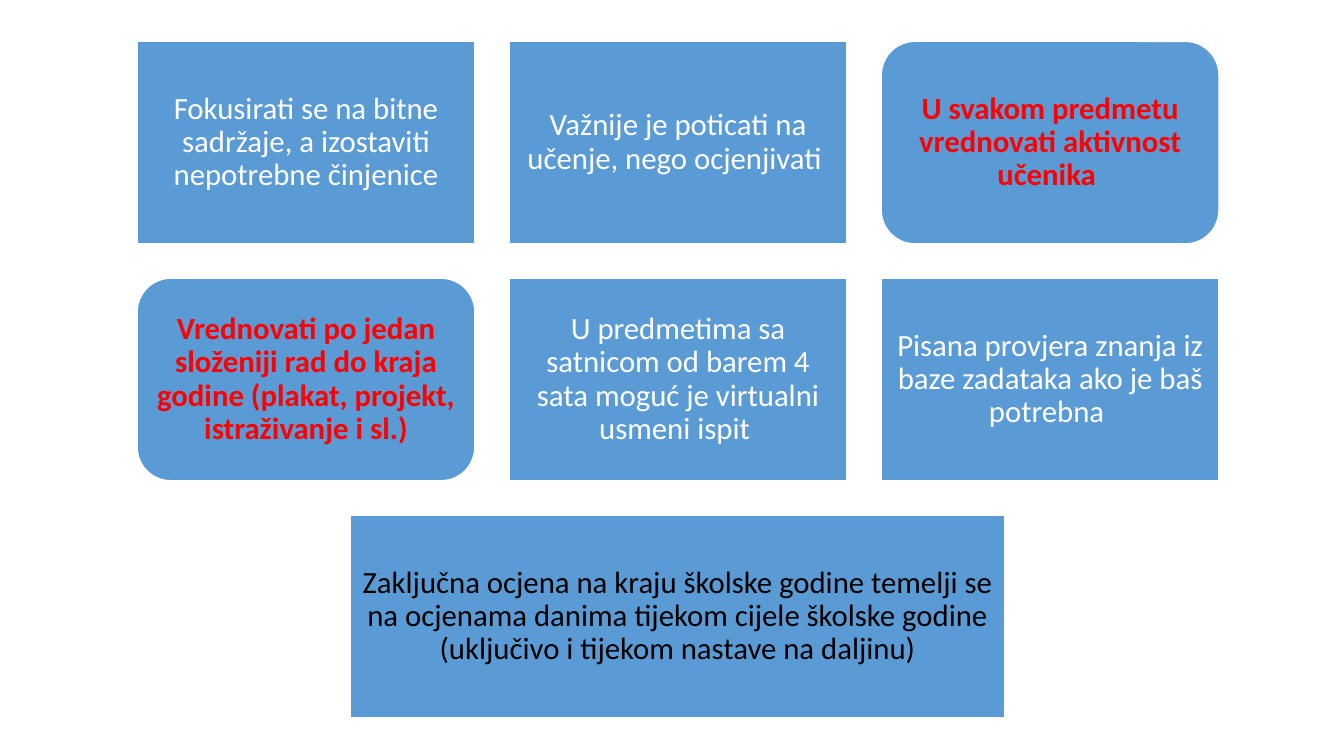
from dataclasses import dataclass

from pptx import Presentation
from pptx.dml.color import RGBColor
from pptx.enum.shapes import MSO_SHAPE as Shape
from pptx.enum.text import MSO_ANCHOR as Anchor, PP_ALIGN as Align
from pptx.util import Inches, Pt


@dataclass(frozen=True)
class Theme:
    font: str = "Calibri"
    size: int = 22
    fill: str = "5B9BD5"
    white: str = "FFFFFF"
    black: str = "000000"
    accent: str = "FF0000"


THEME = Theme()
LEFT, TOP = 1.36, 0.41
WIDTH, HEIGHT = 3.35, 2.01
GAP = 0.34
COLUMN_STEP, ROW_STEP = WIDTH + GAP, HEIGHT + GAP
COLUMNS = 3
SUMMARY_LEFT, SUMMARY_WIDTH = 3.47, 6.5

GUIDELINES = [
    ("Fokusirati se na bitne sadržaje, a izostaviti nepotrebne činjenice", False),
    ("Važnije je poticati na učenje, nego ocjenjivati ", False),
    ("U svakom predmetu vrednovati aktivnost učenika ", True),
    ("Vrednovati po jedan složeniji rad do kraja godine (plakat, projekt, istraživanje i sl.)", True),
    ("U predmetima sa satnicom od barem 4 sata moguć je virtualni usmeni ispit ", False),
    ("Pisana provjera znanja iz baze zadataka ako je baš potrebna ", False),
]
SUMMARY = (
    "Zaključna ocjena na kraju školske godine temelji se na ocjenama danima "
    "tijekom cijele školske godine (uključivo i tijekom nastave na daljinu)"
)


class SlideBuilder:
    """Draws styled guideline cards on one slide."""

    def __init__(self, slide, theme):
        self.slide = slide
        self.theme = theme

    def card(self, text, left, top, width, color, kind=Shape.RECTANGLE, bold=False):
        shape = self.slide.shapes.add_shape(
            kind, Inches(left), Inches(top), Inches(width), Inches(HEIGHT)
        )
        shape.shadow.inherit = False
        shape.fill.solid()
        shape.fill.fore_color.rgb = RGBColor.from_string(self.theme.fill)
        shape.line.color.rgb = RGBColor.from_string(self.theme.white)
        shape.line.width = Pt(1)
        self.label(shape.text_frame, text, color, bold)

    def label(self, text_frame, text, color, bold):
        text_frame.text = text
        text_frame.word_wrap = True
        text_frame.vertical_anchor = Anchor.MIDDLE
        text_frame.margin_left = text_frame.margin_right = Inches(0.09)
        text_frame.margin_top = text_frame.margin_bottom = Inches(0.09)
        paragraph = text_frame.paragraphs[0]
        paragraph.alignment = Align.CENTER
        paragraph.line_spacing = 0.9
        font = paragraph.runs[0].font
        font.name = self.theme.font
        font.size = Pt(self.theme.size)
        font.bold = bold
        font.color.rgb = RGBColor.from_string(color)

    def guideline(self, index, text, highlighted):
        row, column = divmod(index, COLUMNS)
        self.card(
            text,
            LEFT + column * COLUMN_STEP,
            TOP + row * ROW_STEP,
            WIDTH,
            self.theme.accent if highlighted else self.theme.white,
            Shape.FLOWCHART_ALTERNATE_PROCESS if highlighted else Shape.RECTANGLE,
            highlighted,
        )


def main():
    presentation = Presentation()
    presentation.slide_width = Inches(13.33)
    presentation.slide_height = Inches(7.5)
    slide = presentation.slides.add_slide(presentation.slide_layouts[6])
    builder = SlideBuilder(slide, THEME)
    for index, (text, highlighted) in enumerate(GUIDELINES):
        builder.guideline(index, text, highlighted)
    builder.card(SUMMARY, SUMMARY_LEFT, TOP + 2 * ROW_STEP, SUMMARY_WIDTH, THEME.black)
    presentation.save("out.pptx")


if __name__ == "__main__":
    main()
